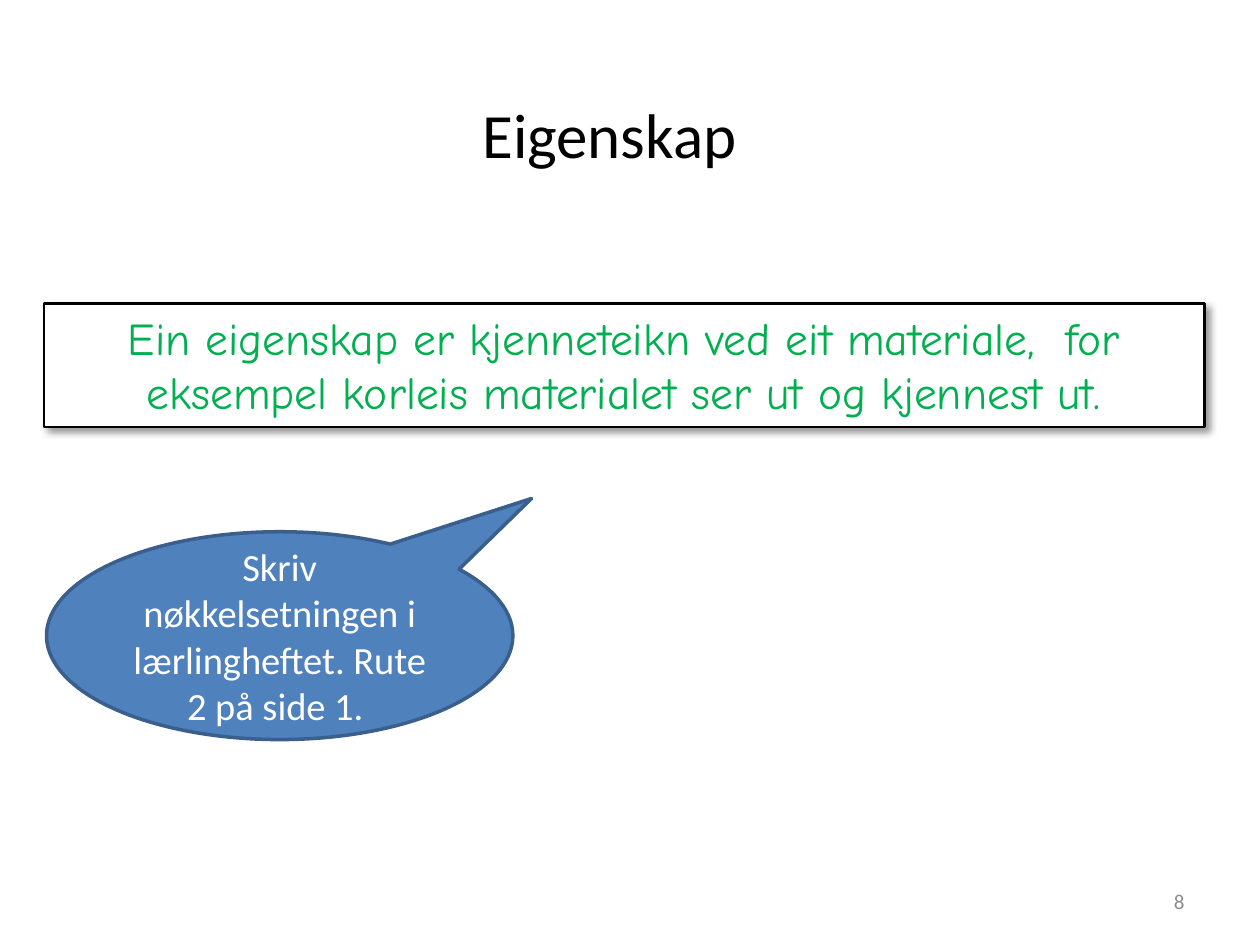
from lxml.etree import SubElement
from pptx import Presentation
from pptx.dml.color import RGBColor as Rgb
from pptx.enum.shapes import MSO_SHAPE as Kind
from pptx.enum.text import MSO_ANCHOR as Anchor, MSO_AUTO_SIZE as Fit, PP_ALIGN as Align
from pptx.oxml.ns import qn
from pptx.util import Cm, Pt

HUES = {
    "black": "000000",
    "white": "FFFFFF",
    "gray": "8C8C8C",
    "green": "00B050",
    "blue": "4F81BD",
    "navy": "3A5F8C",
}


def hue(name):
    """Return the named colour."""
    return Rgb.from_string(HUES[name])


def write(shape, runs, font, color, align=Align.CENTER, **form):
    """Fill a shape with one paragraph of (text, size) runs."""
    frame = shape.text_frame
    form = {"word_wrap": True, "auto_size": Fit.NONE,
            "vertical_anchor": Anchor.MIDDLE, **form}
    for key, value in form.items():
        setattr(frame, key, value)
    para = frame.paragraphs[0]
    para.alignment = align
    for text, size in runs:
        run = para.add_run()
        run.text = text
        for key, value in {"name": font, "size": Pt(size)}.items():
            setattr(run.font, key, value)
        run.font.color.rgb = hue(color)


def draw(slide, kind, box, fill, line, width):
    """Add a filled and outlined preset shape without a shadow."""
    shape = slide.shapes.add_shape(kind, *map(Cm, box))
    shape.shadow.inherit = False
    shape.fill.solid()
    shape.fill.fore_color.rgb = hue(fill)
    shape.line.color.rgb = hue(line)
    shape.line.width = Pt(width)
    return shape


def shade(shape):
    """Give a shape a soft shadow down to the right."""
    effects = shape.element.spPr.find(qn("a:effectLst"))
    outer = SubElement(effects, qn("a:outerShdw"), blurRad=str(Pt(4)),
                       dist=str(Pt(3)), dir="2700000", algn="tl", rotWithShape="0")
    color = SubElement(outer, qn("a:srgbClr"), val=HUES["black"])
    SubElement(color, qn("a:alpha"), val="40000")


def head(slide, box):
    """Place the slide title."""
    title = slide.shapes.title
    for key, value in zip(("left", "top", "width", "height"), box):
        setattr(title, key, Cm(value))
    write(title, [("Eigenskap", 36), (" ", 60), (" ", 44)], "Calibri", "black")


def number(slide, box):
    """Place the page number."""
    label = slide.shapes.add_textbox(*map(Cm, box))
    write(label, [("8", 12)], "Calibri", "gray", Align.RIGHT)


def key_box(slide, box):
    """Place the framed key sentence."""
    panel = draw(slide, Kind.RECTANGLE, box, "white", "black", 1.5)
    shade(panel)
    text = ("Ein eigenskap er kjenneteikn ved eit materiale,  for eksempel "
            "korleis materialet ser ut og kjennest ut.")
    write(panel, [(text, 26)], "Comic Neue", "green",
          vertical_anchor=Anchor.TOP, auto_size=Fit.SHAPE_TO_FIT_TEXT)


def bubble(slide, box):
    """Place the speech bubble with the task."""
    shape = draw(slide, Kind.OVAL_CALLOUT, box, "blue", "navy", 2)
    shape.adjustments[0] = 0.54
    shape.adjustments[1] = -0.66
    text = "Skriv nøkkelsetningen i lærlingheftet. Rute 2 på side 1. "
    write(shape, [(text, 22)], "Calibri", "white")


def main():
    """Build and save the slide."""
    deck = Presentation()
    deck.slide_width, deck.slide_height = Cm(25.4), Cm(19.05)
    slide = deck.slides.add_slide(deck.slide_layouts[5])
    head(slide, (1.27, 0.76, 22.86, 3.18))
    number(slide, (18.21, 17.65, 5.92, 1.02))
    key_box(slide, (0.89, 6.12, 23.39, 2.49))
    bubble(slide, (0.94, 10.72, 9.4, 4.19))
    deck.save("out.pptx")


if __name__ == "__main__":
    main()
